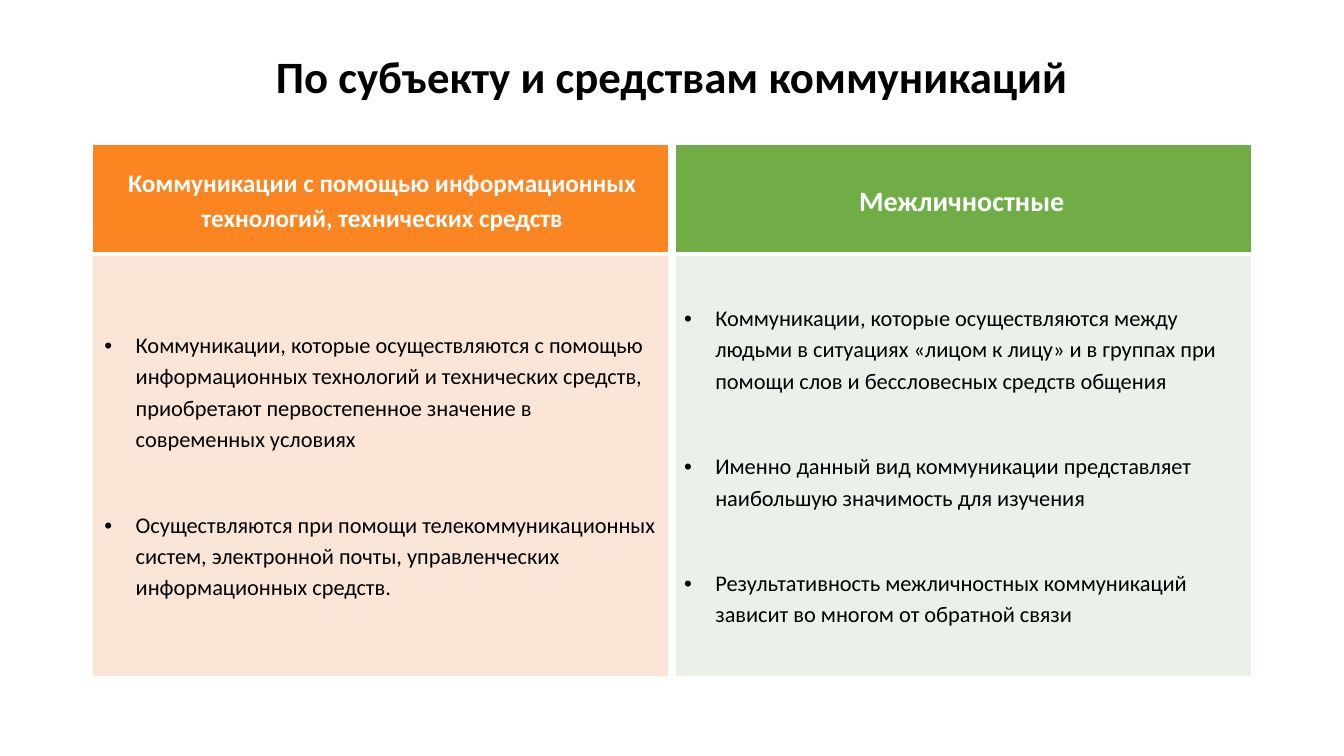
from lxml.etree import SubElement as Sub
from pptx import Presentation
from pptx.dml.color import RGBColor
from pptx.enum.text import MSO_ANCHOR as Anchor, PP_ALIGN as Align
from pptx.oxml.ns import qn
from pptx.util import Inches, Pt

HEADS = [
    ("Коммуникации с помощью информационных технологий, технических средств", 18, "FB8520"),
    ("Межличностные", 20, "70AD47"),
]
LISTS = [
    (["Коммуникации, которые осуществляются с помощью информационных технологий "
      "и технических средств, приобретают первостепенное значение в современных условиях",
      "Осуществляются при помощи телекоммуникационных систем, электронной почты, "
      "управленческих информационных средств."], "FBE5D6", 0.12),
    (["Коммуникации, которые осуществляются между людьми в ситуациях «лицом к лицу» "
      "и в группах при помощи слов и бессловесных средств общения",
      "Именно данный вид коммуникации представляет наибольшую значимость для изучения",
      "Результативность межличностных коммуникаций зависит во многом от обратной связи"],
     "EBF1E9", 0.07),
]


def color(code):
    """Turn a hex string into a colour."""
    return RGBColor.from_string(code)


class Deck:
    """Hold the style, the grid of 160 by 90 units and the current slide."""

    font, dark, light = "Calibri", "000000", "FFFFFF"

    def __init__(self):
        """Open a wide deck with one title slide."""
        self.prs = Presentation()
        self.prs.slide_width, self.prs.slide_height = Inches(13.33), Inches(7.5)
        self.slide = self.prs.slides.add_slide(self.prs.slide_layouts[5])

    def x(self, cols):
        """Measure grid columns."""
        return int(self.prs.slide_width * cols / 160)

    def y(self, rows):
        """Measure grid rows."""
        return int(self.prs.slide_height * rows / 90)

    def style(self, para, size, hue, bold, align, line):
        """Format a paragraph and its runs."""
        para.alignment, para.line_spacing = align, line
        for run in para.runs:
            font = run.font
            font.name, font.size, font.bold = self.font, Pt(size), bold
            font.color.rgb = color(hue)

    def title(self, text, left, top, width, height):
        """Place the slide title."""
        box = self.slide.shapes.title
        box.left, box.top = self.x(left), self.y(top)
        box.width, box.height = self.x(width), self.y(height)
        frame = box.text_frame
        frame.text, frame.vertical_anchor = text, Anchor.MIDDLE
        self.style(frame.paragraphs[0], 32, self.dark, True, Align.CENTER, 0.9)

    def table(self, left, top, width, rows):
        """Add a two-column table with the given row heights."""
        grid = self.slide.shapes.add_table(
            len(rows), 2, self.x(left), self.y(top), self.x(width), self.y(sum(rows))).table
        grid.first_row = grid.horz_banding = False
        for col in grid.columns:
            col.width = self.x(width / 2)
        for row, size in zip(grid.rows, rows):
            row.height = self.y(size)
        return grid

    def cell(self, cell, fill, pads, edges):
        """Set the padding, borders and fill of a cell."""
        cell.margin_left, cell.margin_top, cell.margin_right, cell.margin_bottom = map(Inches, pads)
        cell.vertical_anchor = Anchor.MIDDLE
        props = cell._tc.get_or_add_tcPr()
        for side, wide in zip("LRTB", edges):
            line = Sub(props, qn(f"a:ln{side}"), w=str(Pt(wide)))
            Sub(Sub(line, qn("a:solidFill")), qn("a:srgbClr"), val=self.light)
        cell.fill.solid()
        cell.fill.fore_color.rgb = color(fill)

    def head(self, cell, text, size):
        """Write a column heading."""
        cell.text_frame.text = text
        para = cell.text_frame.paragraphs[0]
        para.space_after = Pt(8)
        self.style(para, size, self.light, True, Align.CENTER, 1.15)

    def list(self, cell, items):
        """Write a bulleted list with wide gaps between items."""
        frame = cell.text_frame
        frame.text = "\n".join(items)
        for i, para in enumerate(frame.paragraphs):
            para.space_before, para.space_after = Pt(30.5 if i else 0), Pt(8)
            self.style(para, 16, self.dark, False, Align.LEFT, 1.15)
            props = para._p.get_or_add_pPr()
            props.set("marL", str(Inches(0.31)))
            props.set("indent", str(-Inches(0.31)))
            Sub(props, qn("a:buFont"), typeface="Arial")
            Sub(props, qn("a:buChar"), char="•")


def main():
    """Build the slide."""
    deck = Deck()
    deck.title("По субъекту и средствам коммуникаций", 11, 5.4, 138, 8)
    grid = deck.table(11, 17.2, 138, [13, 50.3])
    sides = [(1, 6), (6, 1)]
    for i, ((text, size, hue), (items, tint, pad), side) in enumerate(zip(HEADS, LISTS, sides)):
        top, body = grid.cell(0, i), grid.cell(1, i)
        deck.cell(top, hue, (0.07, 0, 0.07, 0), (*side, 1, 3))
        deck.head(top, text, size)
        deck.cell(body, tint, (0.12, 0.04, pad, 0.04), (*side, 3, 1))
        deck.list(body, items)
    deck.prs.save("out.pptx")


if __name__ == "__main__":
    main()
